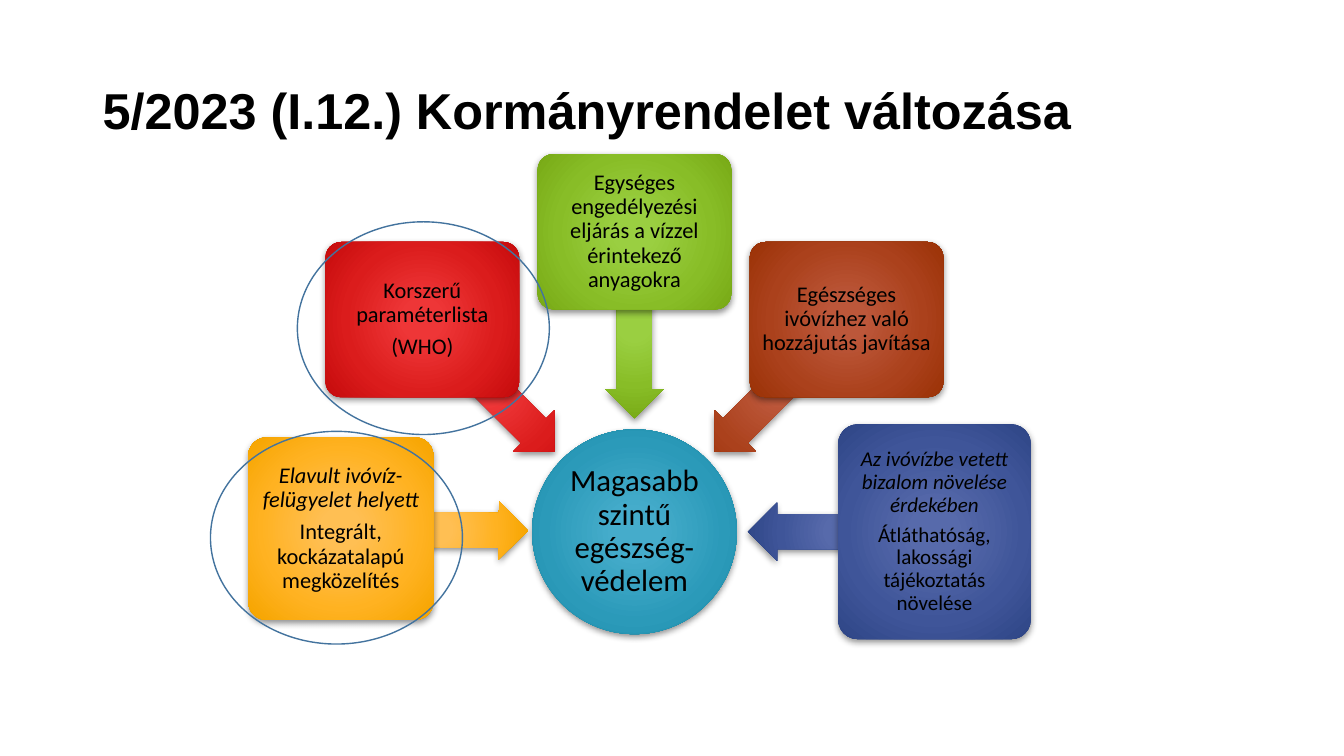
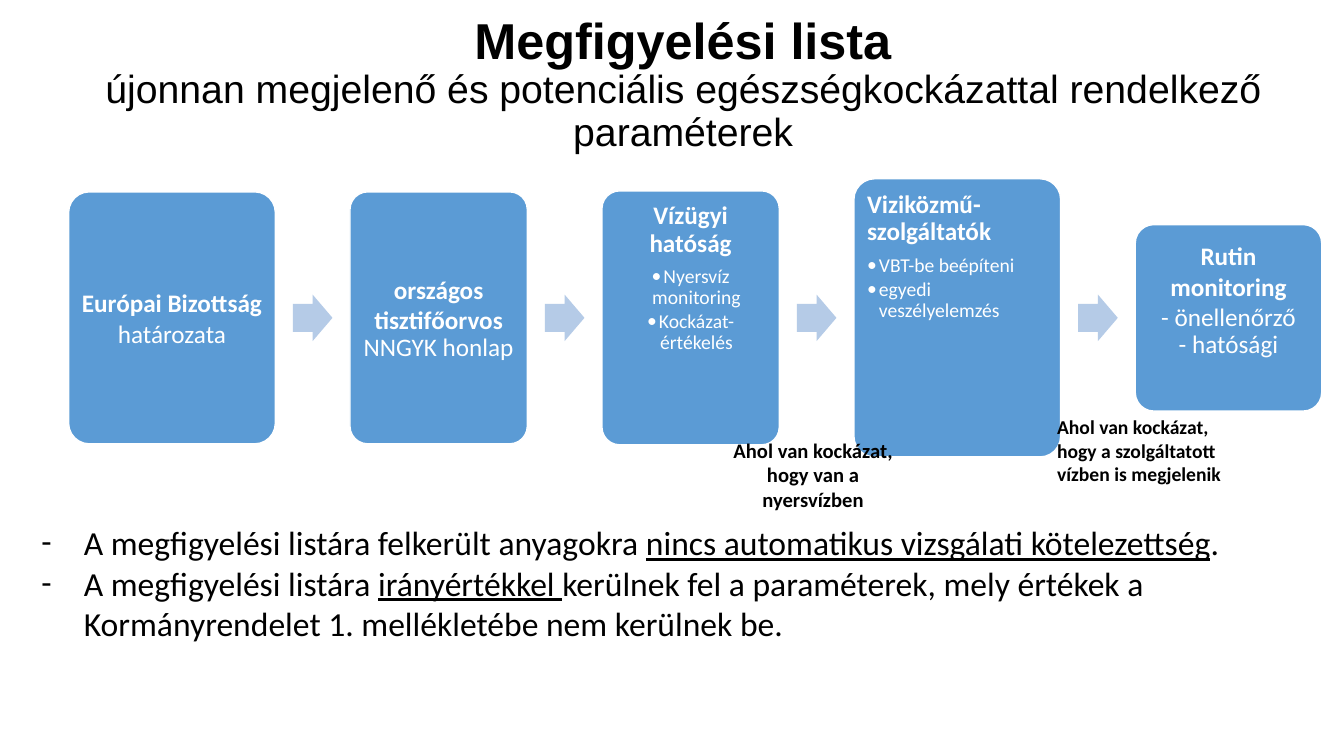
from dataclasses import dataclass
from math import cos, radians, sin

from lxml import etree
from pptx import Presentation
from pptx import util as u
from pptx.dml.color import RGBColor
from pptx.enum import shapes, text
from pptx.oxml import ns

COLORS = {
    "text": "000000",
    "light": "FFFFFF",
    "step": "5B9BD5",
    "step_arrow": "B5CBE7",
    "ring": "43739E",
}
# Radial fills from the centre outwards; the stops follow GRADIENT_STOPS.
GRADIENTS = {
    "teal": ("45ACCC", "45ACCB", "2B9AB9", "1C8AA7", "0E89A7"),
    "yellow": ("FFBF54", "FFBF53", "FFB221", "F6A500", "D69900"),
    "red": ("EF3737", "EE3637", "DB1C1C", "C70C0D", "C30001"),
    "green": ("9AD041", "9ACF41", "88BD27", "79AB17", "77AC08"),
    "brown": ("BD583A", "BC573A", "AB411C", "9C3308", "7E3600"),
    "blue": ("576BAC", "576AAB", "3F5599", "304788", "264086"),
}
GRADIENT_STOPS = (0, 15, 62, 97, 100)
TITLE_FONT, BODY_FONT = "Arial", "Calibri"
TITLE_SIZE = 36
LEFT, CENTER = text.PP_ALIGN.LEFT, text.PP_ALIGN.CENTER
TOP, MIDDLE = text.MSO_ANCHOR.TOP, text.MSO_ANCHOR.MIDDLE
KIND = shapes.MSO_SHAPE


@dataclass
class Span:
    text: str
    size: float
    bold: bool = False
    italic: bool = False
    underline: bool = False
    ends_line: bool = False


@dataclass
class Para:
    spans: list[Span]
    align: int = CENTER
    spacing: float = 1.0
    before: float = 0
    bullet: str = ""
    indent: float = 0.3


@dataclass
class Factor:
    """A box and its arrow, placed around the hub at an angle."""
    gradient: str
    angle: float
    paras: list[Para]
    width: float = 4.88
    height: float = 3.91
    radius: float = 7.56
    arrow_radius: float = 5.21
    arrow_length: float = 4.7


@dataclass
class Step:
    width: float
    height: float
    paras: list[Para]
    anchor: int = MIDDLE
    bottom_inset: float = 0.18


def plain(words: str, size: float, **options) -> Para:
    style = {key: options.pop(key) for key in ("bold", "italic") if key in options}
    return Para([Span(words, size, **style)], **options)


def factor_text(words: str, size: float = 16, **options) -> Para:
    return plain(words, size, spacing=0.9, **options)


def step_text(words: str, **options) -> Para:
    return plain(words, 18, **options)


def step_bullet(words: str, before: float, align: int) -> Para:
    return plain(words, 14, spacing=0.9, before=before, align=align, bullet="•")


def add_bullet(paragraph, mark: str, indent: float) -> None:
    properties = paragraph._p.get_or_add_pPr()
    properties.set("marL", str(u.Cm(indent)))
    properties.set("indent", str(-u.Cm(indent)))
    etree.SubElement(properties, ns.qn("a:buFont"), typeface=BODY_FONT)
    etree.SubElement(properties, ns.qn("a:buChar"), char=mark)


def write(frame, paras: list[Para], color: str = "text", font: str = BODY_FONT,
          anchor: int = MIDDLE) -> None:
    frame.word_wrap = True
    frame.auto_size = text.MSO_AUTO_SIZE.NONE
    frame.vertical_anchor = anchor
    for number, para in enumerate(paras):
        paragraph = frame.add_paragraph() if number else frame.paragraphs[0]
        if para.bullet:
            add_bullet(paragraph, para.bullet, para.indent)
        paragraph.alignment = para.align
        paragraph.line_spacing = para.spacing
        paragraph.space_before = u.Pt(para.before)
        for span in para.spans:
            run = paragraph.add_run()
            run.text = span.text
            run.font.name, run.font.size = font, u.Pt(span.size)
            run.font.bold, run.font.italic = span.bold, span.italic
            run.font.underline = span.underline
            run.font.color.rgb = RGBColor.from_string(COLORS[color])
            if span.ends_line:
                paragraph.add_line_break()


def set_insets(frame, inset: float) -> None:
    frame.margin_left = frame.margin_right = u.Cm(inset)
    frame.margin_top = frame.margin_bottom = u.Cm(inset)


def place(item, left: float, top: float, width: float, height: float) -> None:
    item.left, item.top = u.Cm(left), u.Cm(top)
    item.width, item.height = u.Cm(width), u.Cm(height)


def add_shape(slide, kind: int, center: tuple[float, float], width: float,
              height: float, fill: str = "", line: str = ""):
    x, y = center
    shape = slide.shapes.add_shape(kind, u.Cm(x - width / 2), u.Cm(y - height / 2),
                                   u.Cm(width), u.Cm(height))
    shape.shadow.inherit = False
    if kind == KIND.ROUNDED_RECTANGLE:
        shape.adjustments[0] = 0.1
    elif kind in (KIND.LEFT_ARROW, KIND.RIGHT_ARROW):
        shape.adjustments[0], shape.adjustments[1] = 0.6, 0.5
    if fill in COLORS:
        shape.fill.solid()
        shape.fill.fore_color.rgb = RGBColor.from_string(COLORS[fill])
    else:
        shape.fill.background()
    if line:
        shape.line.color.rgb = RGBColor.from_string(COLORS[line])
        shape.line.width = u.Pt(1)
    else:
        shape.line.fill.background()
    if fill in GRADIENTS:
        glow(shape, GRADIENTS[fill])
    return shape


def glow(shape, hexes: tuple[str, ...]) -> None:
    """Give the shape a radial gradient and a soft shadow below it."""
    stops = "".join(f'<a:gs pos="{stop * 1000}"><a:srgbClr val="{value}"/></a:gs>'
                    for stop, value in zip(GRADIENT_STOPS, hexes))
    properties = shape._element.spPr
    properties.replace(properties.find(ns.qn("a:noFill")), etree.fromstring(
        f'<a:gradFill {ns.nsdecls("a")} rotWithShape="1"><a:gsLst>{stops}</a:gsLst>'
        '<a:path path="circle"><a:fillToRect l="50000" t="50000" r="50000" b="50000"/>'
        '</a:path></a:gradFill>'))
    properties.find(ns.qn("a:effectLst")).append(etree.fromstring(
        f'<a:outerShdw {ns.nsdecls("a")} blurRad="{u.Pt(5)}" dist="{u.Pt(2)}" '
        'dir="5400000" algn="ctr" rotWithShape="0"><a:srgbClr val="000000">'
        '<a:alpha val="43000"/></a:srgbClr></a:outerShdw>'))


def add_title(slide, box: tuple[float, ...], spans: list[Span], align: int) -> None:
    place(slide.shapes.title, *box)
    write(slide.shapes.title.text_frame, [Para(spans, align, 0.9)], font=TITLE_FONT)


def add_note(slide, box: tuple[float, ...], para: Para) -> None:
    note = slide.shapes.add_textbox(0, 0, 0, 0)
    place(note, *box)
    write(note.text_frame, [para], anchor=TOP)


def build_regulation(deck) -> None:
    slide = deck.slides.add_slide(deck.slide_layouts[5])
    add_title(slide, (2.33, 1.02, 29.21, 3.68),
              [Span("5/2023 (I.12.) Kormányrendelet változása", TITLE_SIZE, bold=True)], LEFT)
    hub_center = (15.99, 13.4)
    hub = add_shape(slide, KIND.OVAL, hub_center, 5.16, 5.16, "teal")
    set_insets(hub.text_frame, 0.05)
    write(hub.text_frame, [factor_text("Magasabb szintű egészség- védelem", 22)])

    factors = [
        Factor("yellow", 180.6,
               [factor_text("Elavult ivóvíz-felügyelet helyett", italic=True),
                factor_text("Integrált, kockázatalapú megközelítés", before=5.6)],
               4.67, 4.6, 7.4, 4.97, 4.57),
        Factor("red", 225, [factor_text("Korszerű paraméterlista"),
                            factor_text("(WHO)", before=5.6)]),
        Factor("green", 270, [factor_text(
            "Egységes engedélyezési eljárás a vízzel érintekező anyagokra")]),
        Factor("brown", 315, [factor_text("Egészséges ivóvízhez való hozzájutás javítása")]),
        Factor("blue", 0,
               [factor_text("Az ivóvízbe vetett bizalom növelése érdekében", 15, italic=True),
                factor_text("Átláthatóság, lakossági tájékoztatás növelése", 15, before=5.2)],
               4.85, 5.41),
    ]
    for factor in factors:
        turn = radians(factor.angle)
        arrow_center, box_center = (
            (hub_center[0] + radius * cos(turn), hub_center[1] + radius * sin(turn))
            for radius in (factor.arrow_radius, factor.radius))
        arrow = add_shape(slide, KIND.LEFT_ARROW, arrow_center,
                          factor.arrow_length, 1.47, factor.gradient)
        arrow.rotation = factor.angle
        box = add_shape(slide, KIND.ROUNDED_RECTANGLE, box_center,
                        factor.width, factor.height, factor.gradient)
        set_insets(box.text_frame, 0.08)
        write(box.text_frame, factor.paras)
    for ring_center in ((10.67, 8.27), (8.48, 13.55)):
        add_shape(slide, KIND.OVAL, ring_center, 6.35, 5.36, line="ring")


def build_watch_list(deck) -> None:
    slide = deck.slides.add_slide(deck.slide_layouts[1])
    add_title(slide, (0.58, 1.37, 33.27, 1.55),
              [Span("Megfigyelési lista", TITLE_SIZE, bold=True, ends_line=True),
               Span("újonnan megjelenő és potenciális egészségkockázattal "
                    "rendelkező paraméterek", 28)], CENTER)
    steps = [
        Step(5.21, 6.35, [Para([Span("Európai Bizottság ", 18, bold=True),
                                Span("határozata", 18)])]),
        Step(4.47, 6.35, [step_text("országos tisztifőorvos", bold=True),
                          step_text("NNGYK honlap", spacing=0.9)]),
        Step(4.47, 6.4, [step_text("Vízügyi hatóság", bold=True, spacing=0.9),
                         step_bullet("Nyersvíz monitoring", 6.3, CENTER),
                         step_bullet("Kockázat-értékelés", 2.1, CENTER)], TOP),
        Step(5.21, 7.01, [step_text("Viziközmű-szolgáltatók", bold=True, spacing=0.9,
                                    align=LEFT),
                          step_bullet("VBT-be beépíteni", 6.3, LEFT),
                          step_bullet("egyedi veszélyelemzés", 2.1, LEFT)], TOP),
        Step(4.7, 4.7, [step_text("Rutin monitoring", bold=True),
                        step_text("- önellenőrző"),
                        step_text("- hatósági", spacing=0.9)], bottom_inset=1.1),
    ]
    left, middle, gap, arrow_width = 1.73, 8.01, 1.88, 1.0
    for number, step in enumerate(steps):
        if number:
            add_shape(slide, KIND.RIGHT_ARROW, (left - gap / 2, middle),
                      arrow_width, 1.17, "step_arrow")
        box = add_shape(slide, KIND.ROUNDED_RECTANGLE, (left + step.width / 2, middle),
                        step.width, step.height, "step", "light")
        set_insets(box.text_frame, 0.18)
        box.text_frame.margin_bottom = u.Cm(step.bottom_inset)
        write(box.text_frame, step.paras, "light", anchor=step.anchor)
        left += step.width + gap

    add_note(slide, (18.14, 10.9, 4.7, 2.13),
             plain("Ahol van kockázat, hogy van a nyersvízben", 14.7, bold=True))
    add_note(slide, (26.39, 10.34, 5.0, 2.06),
             plain("Ahol van kockázat, hogy a szolgáltatott vízben is megjelenik", 14,
                   bold=True, align=LEFT))
    body = slide.placeholders[1]
    place(body, 0.79, 13.03, 31.12, 3.33)
    rules = [
        [Span("A megfigyelési listára felkerült anyagokra ", 24),
         Span("nincs automatikus vizsgálati kötelezettség", 24, underline=True),
         Span(".", 24)],
        [Span("A megfigyelési listára ", 24),
         Span("irányértékkel ", 24, underline=True),
         Span("kerülnek fel a paraméterek, mely értékek a Kormányrendelet "
              "1. mellékletébe nem kerülnek be.", 24)],
    ]
    write(body.text_frame, [Para(spans, LEFT, bullet="-", indent=1.07) for spans in rules],
          anchor=TOP)


def main() -> None:
    deck = Presentation()
    deck.slide_width, deck.slide_height = u.Cm(33.87), u.Cm(19.05)
    title_style = deck.slide_master.element.find(".//" + ns.qn("p:titleStyle"))
    title_style.find(".//" + ns.qn("a:defRPr")).set("sz", str(TITLE_SIZE * 100))
    build_regulation(deck)
    build_watch_list(deck)
    deck.save("out.pptx")


if __name__ == "__main__":
    main()
